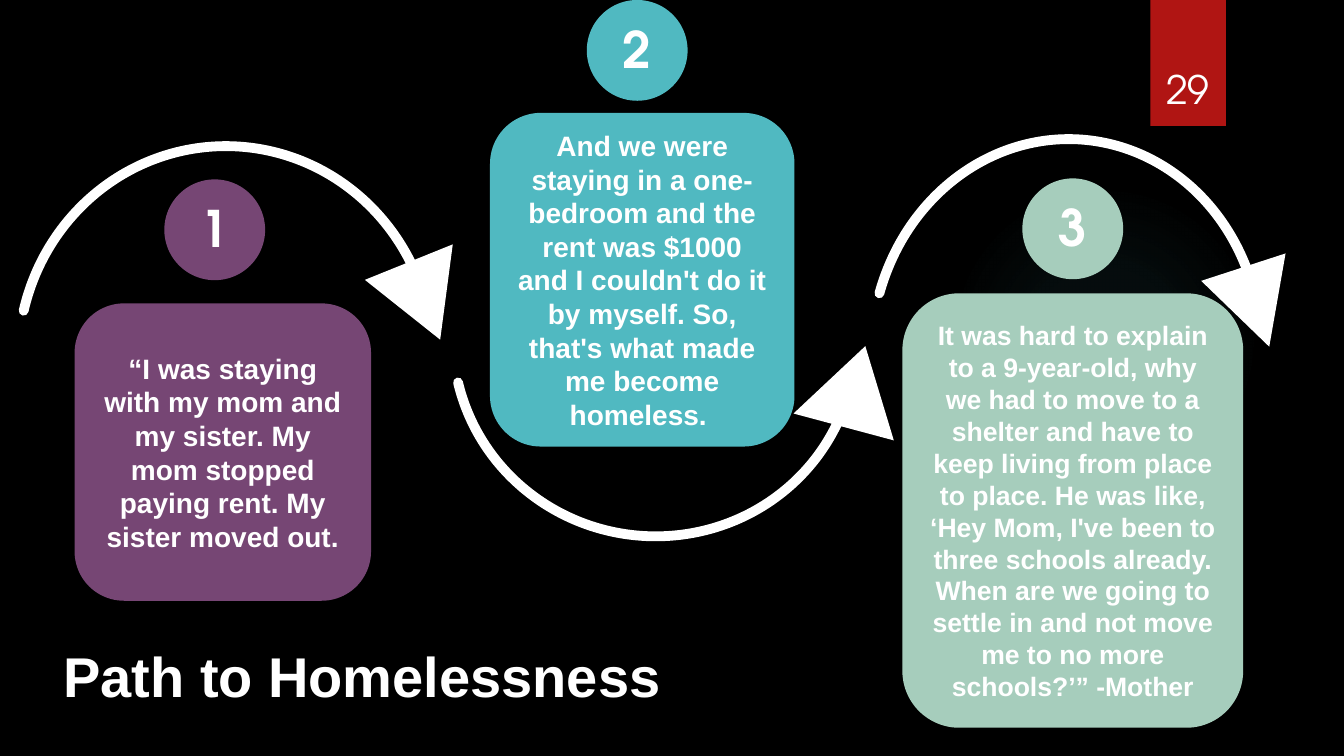
from collections import namedtuple

from lxml import etree
from pptx import Presentation
from pptx.dml.color import RGBColor
from pptx.enum.shapes import MSO_SHAPE
from pptx.enum.text import MSO_ANCHOR, PP_ALIGN
from pptx.oxml import parse_xml
from pptx.oxml.ns import nsdecls
from pptx.util import Inches, Pt

ARC, TRIANGLE = MSO_SHAPE.ARC, MSO_SHAPE.ISOSCELES_TRIANGLE
OVAL, CIRCLE = MSO_SHAPE.OVAL, MSO_SHAPE.FLOWCHART_CONNECTOR
RECTANGLE, ROUNDED = MSO_SHAPE.RECTANGLE, MSO_SHAPE.ROUNDED_RECTANGLE
LEFT, CENTER = PP_ALIGN.LEFT, PP_ALIGN.CENTER
TOP, MIDDLE, BOTTOM = MSO_ANCHOR.TOP, MSO_ANCHOR.MIDDLE, MSO_ANCHOR.BOTTOM

BLACK = RGBColor(0x00, 0x00, 0x00)
WHITE = RGBColor(0xFF, 0xFF, 0xFF)
RED = RGBColor(0xB0, 0x15, 0x13)
PURPLE = RGBColor(0x76, 0x46, 0x74)
TEAL = RGBColor(0x50, 0xB9, 0xC1)
MINT = RGBColor(0xA6, 0xCD, 0xBC)

BODY_FONT, NUMBER_FONT = "Arial", "TeX Gyre Adventor"
COLUMN = ROW = Inches(1)  # the grid has square cells
SLIDE_COLUMNS, SLIDE_ROWS = 13.33, 7.5
BADGE_SIZE = 1
ARC_START = 116.19

Box = namedtuple("Box", "left top width height")
Arrow = namedtuple("Arrow", "arc turn arc_end head head_turn")
Step = namedtuple("Step", "number card badge color size quote")

# The head of an arrow is placed from the corner of its arc,
# the badge of a step from the corner of its card.
ARROWS = [
    Arrow(Box(0.18, 1.45, 4.12, 4.24), 0, 206.83, Box(3.56, 1.12, 0.94, 0.83), 158),
    Arrow(Box(4.49, 1.41, 4, 3.91), 188, 203.74, Box(3.47, 2.01, 1.03, 0.83), 15),
    Arrow(Box(8.64, 1.38, 3.87, 4.24), 4, 206.83, Box(3.38, 1.25, 0.88, 0.83), 162),
]
STEPS = [
    Step("1", Box(0.74, 3.01, 2.94, 2.95), (0.89, -1.23), PURPLE, 20,
         "“I was staying with my mom and my sister. My mom stopped paying rent. "
         "My sister moved out."),
    Step("2", Box(4.86, 1.12, 3.02, 3.31), (0.96, -1.12), TEAL, 20,
         "And we were staying in a one-bedroom and the rent was $1000 and I "
         "couldn't do it by myself. So, that's what made me become homeless. "),
    Step("3", Box(8.95, 2.91, 3.38, 4.31), (1.19, -1.14), MINT, 19,
         "It was hard to explain to a 9-year-old, why we had to move to a shelter "
         "and have to keep living from place to place. He was like, ‘Hey Mom, I've "
         "been to three schools already. When are we going to settle in and not "
         "move me to no more schools?’” -Mother"),
]


def inside(outer, box):
    """Turn a box measured from the corner of outer into a slide box."""
    return box._replace(left=outer.left + box.left, top=outer.top + box.top)


def on_grid(box):
    return (round(box.left * COLUMN), round(box.top * ROW),
            round(box.width * COLUMN), round(box.height * ROW))


def add_shape(slide, kind, box, fill=None, turn=0):
    shape = slide.shapes.add_shape(kind, *on_grid(box))
    shape.shadow.inherit = False
    shape.rotation = turn
    shape.line.fill.background()
    if fill is None:
        shape.fill.background()
    else:
        shape.fill.solid()
        shape.fill.fore_color.rgb = fill
    return shape


def write(shape, text, size, font=BODY_FONT, bold=True, align=LEFT, anchor=TOP):
    frame = shape.text_frame
    frame.word_wrap = True
    frame.vertical_anchor = anchor
    paragraph = frame.paragraphs[0]
    paragraph.text = text
    paragraph.alignment = align
    paragraph.font.name = font
    paragraph.font.size = Pt(size)
    paragraph.font.bold = bold
    paragraph.font.color.rgb = WHITE


def add_text(slide, box, text, size, **style):
    write(slide.shapes.add_textbox(*on_grid(box)), text, size, **style)


def add_glow(slide, box):
    """Faint radial light that fades to nothing at its rim."""
    glow = add_shape(slide, OVAL, box)
    gradient = parse_xml(
        f'<a:gradFill {nsdecls("a")} rotWithShape="1"><a:gsLst/><a:path path="circle">'
        '<a:fillToRect l="50000" t="50000" r="50000" b="50000"/></a:path></a:gradFill>')
    for position, opacity in ((0, 7), (36, 6), (69, 0)):
        stop = parse_xml(
            f'<a:gs {nsdecls("a")} pos="{position * 1000}"><a:srgbClr val="{TEAL}">'
            f'<a:alpha val="{opacity * 1000}"/></a:srgbClr></a:gs>')
        gradient[0].append(stop)
    properties = glow._element.spPr
    no_fill = properties.find(etree.QName(gradient).text.replace("gradFill", "noFill"))
    properties.replace(no_fill, gradient)


def add_page_tab(slide, box, number):
    add_shape(slide, RECTANGLE, box, RED)
    add_text(slide, inside(box, Box(-0.09, 0.32, 0.92, 0.84)), number, 28,
             font=NUMBER_FONT, bold=False, align=CENTER, anchor=BOTTOM)


def add_arrow(slide, arrow):
    arc = add_shape(slide, ARC, arrow.arc, turn=arrow.turn)
    arc.adjustments[0] = ARC_START
    arc.adjustments[1] = arrow.arc_end
    arc.line.color.rgb = WHITE
    arc.line.width = Pt(7)
    arc._element.spPr.get_or_add_ln().set("cap", "rnd")
    add_shape(slide, TRIANGLE, inside(arrow.arc, arrow.head), WHITE, arrow.head_turn)


def add_step(slide, step):
    badge = inside(step.card, Box(*step.badge, BADGE_SIZE, BADGE_SIZE))
    add_shape(slide, CIRCLE, badge, step.color)
    add_text(slide, inside(badge, Box(0.26, 0.13, 0.88, 0.71)), step.number, 36,
             font=NUMBER_FONT)
    card = add_shape(slide, ROUNDED, step.card, step.color)
    write(card, step.quote, step.size, align=CENTER, anchor=MIDDLE)


def build_path_slide(presentation):
    slide = presentation.slides.add_slide(presentation.slide_layouts[6])
    slide.background.fill.solid()
    slide.background.fill.fore_color.rgb = BLACK
    add_glow(slide, Box(9.41, 1.83, 3.08, 3.08))
    add_page_tab(slide, Box(11.41, 0, 0.75, 1.25), "29")
    for arrow in ARROWS:
        add_arrow(slide, arrow)
    for step in STEPS:
        add_step(slide, step)
    add_text(slide, Box(0.53, 6.32, 7.54, 0.77), "Path to Homelessness", 40)


def main():
    presentation = Presentation()
    presentation.slide_width = round(SLIDE_COLUMNS * COLUMN)
    presentation.slide_height = round(SLIDE_ROWS * ROW)
    build_path_slide(presentation)
    presentation.save("out.pptx")


if __name__ == "__main__":
    main()
